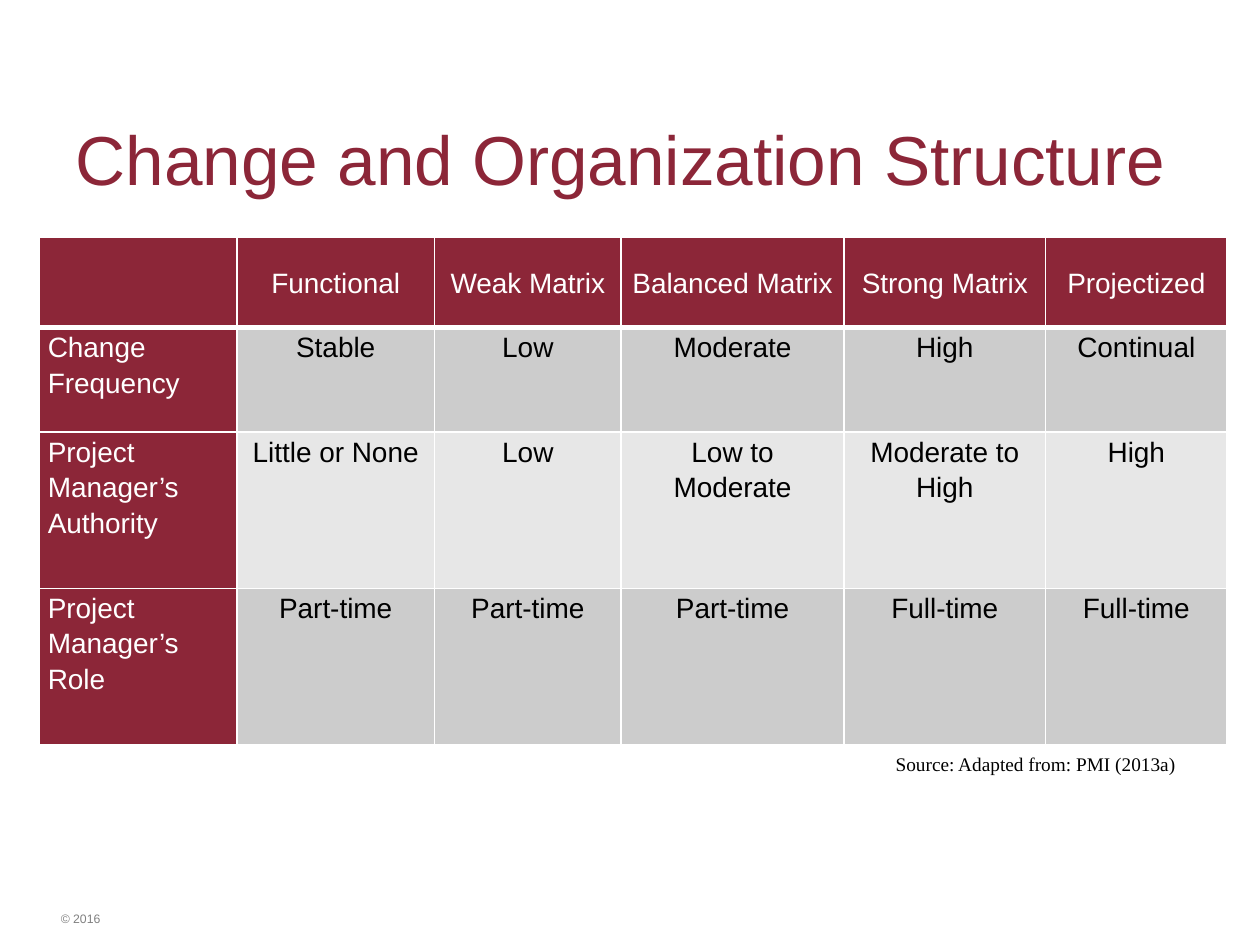
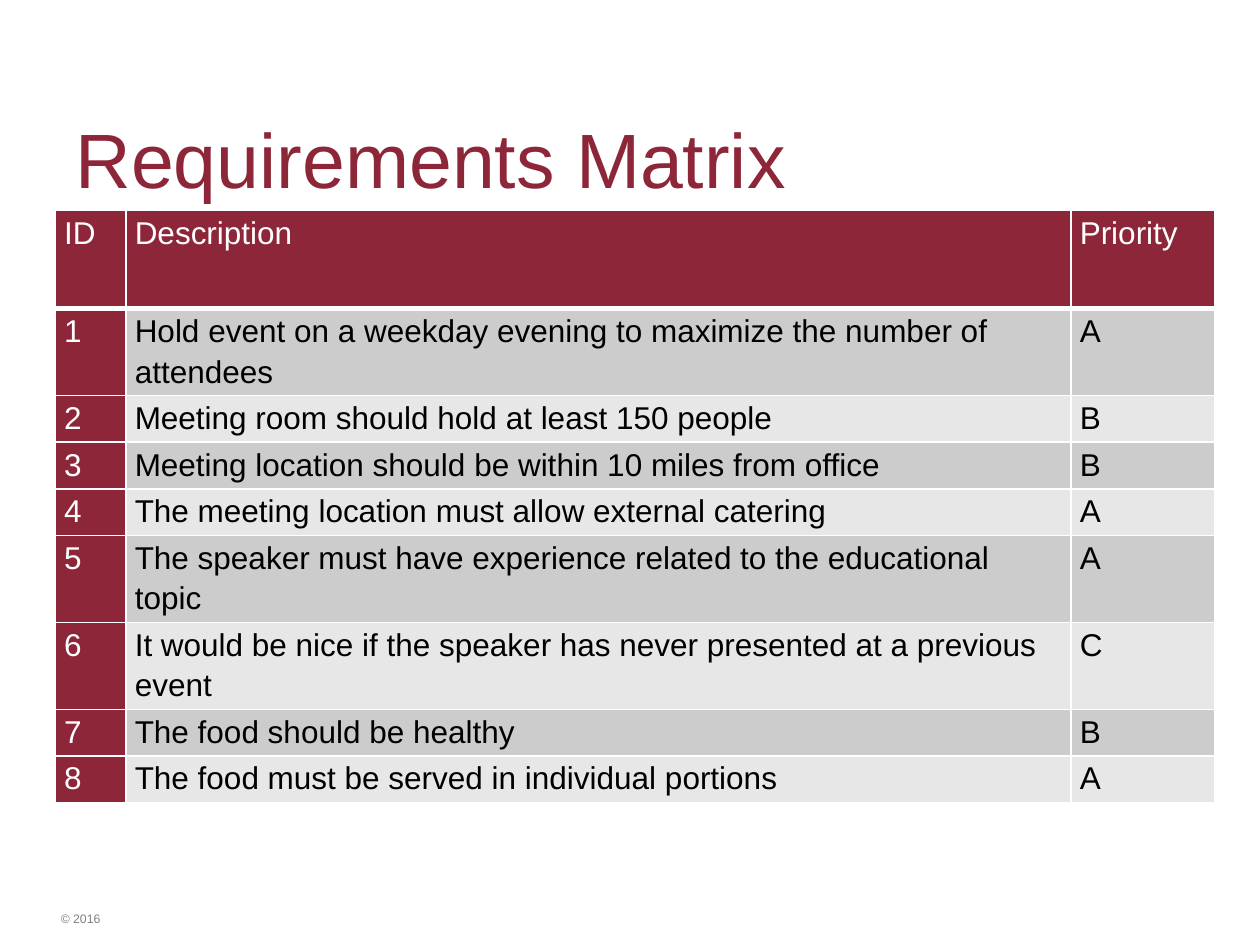
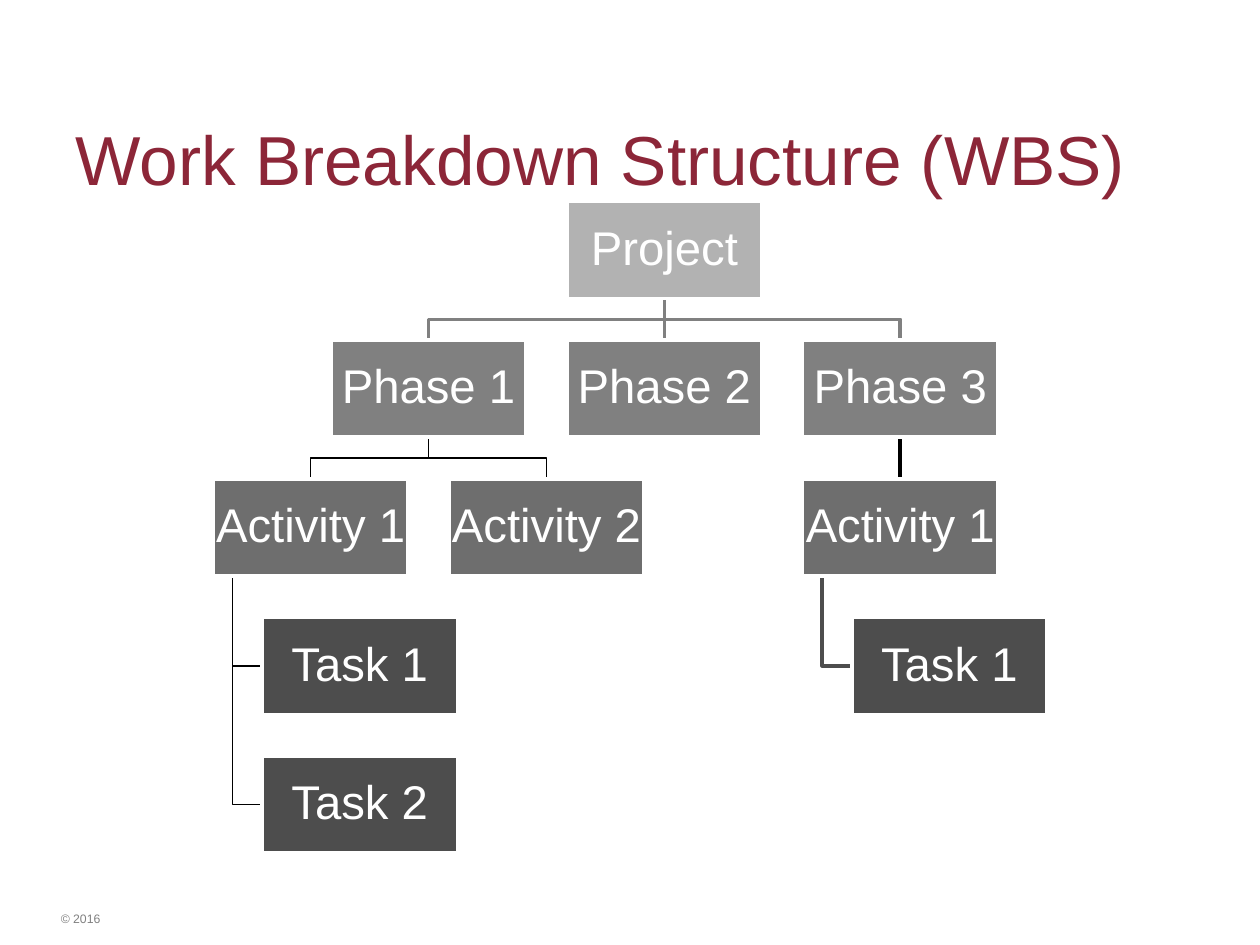
from dataclasses import dataclass

from lxml.etree import SubElement
from pptx import Presentation
from pptx.dml.color import RGBColor
from pptx.enum.shapes import MSO_CONNECTOR, MSO_SHAPE
from pptx.enum.text import MSO_ANCHOR, MSO_AUTO_SIZE, PP_ALIGN
from pptx.oxml.ns import qn
from pptx.util import Inches, Pt

WIDE, HIGH = Inches(10), Inches(7.5)
LEFT, MID = PP_ALIGN.LEFT, PP_ALIGN.CENTER


def ink(code):
    return RGBColor.from_string(code)


class Theme:
    sans, serif = "Arial", "Times New Roman"
    wine, white, black = ink("8C2638"), ink("FFFFFF"), ink("000000")
    gray, dark = ink("808080"), ink("4D4D4D")
    bands = ink("CCCCCC"), ink("E7E7E7")
    levels = ink("B2B2B2"), gray, ink("6E6E6E"), dark, dark
    title, snug = 44, 39.6
    grid, list, node, note, foot = 16, 18, 27, 11, 7
    thin, bold = 0.75, 2


# Lengths are percentages of the slide's width and height
def across(share):
    return round(WIDE * share / 100)


def down(share):
    return round(HIGH * share / 100)


def area(x, y, w, h):
    return across(x), down(y), across(w), down(h)


# Text
def write(frame, text, size, color, align=LEFT, face=Theme.sans, lines=None):
    para = frame.paragraphs[0]
    para.text = text
    para.alignment = align
    para.line_spacing = lines
    font = para.font
    font.name, font.size, font.color.rgb = face, Pt(size), color
    return para


def label(slide, place, text, size, color, **style):
    frame = slide.shapes.add_textbox(*place).text_frame
    frame.word_wrap = True
    return frame, write(frame, text, size, color, **style)


def new_slide(deck, title, size):
    slide = deck.slides.add_slide(deck.slide_layouts[5])
    head = slide.shapes.title
    head.left, head.top, head.width, head.height = area(5, 10.27, 90, 12.93)
    frame = head.text_frame
    frame.auto_size = MSO_AUTO_SIZE.NONE
    frame.vertical_anchor = MSO_ANCHOR.MIDDLE
    write(frame, title, size, Theme.wine)
    label(slide, area(2.6, 95.73, 7.6, 2.93), "© 2016",
          Theme.foot, Theme.gray, align=MID)
    return slide


# Tables
def edge(cell, head):
    props = cell._tc.get_or_add_tcPr()
    for side in "LRTB":
        width = 3 if head and side == "B" else 1
        line = SubElement(props, qn(f"a:ln{side}"), w=str(Pt(width)))
        fill = SubElement(line, qn("a:solidFill"))
        SubElement(fill, qn("a:srgbClr"), val=str(Theme.white))


def grid(slide, x, y, cols, rows, data, size, align=LEFT, lead=1.15):
    place = area(x, y, sum(cols), sum(rows))
    table = slide.shapes.add_table(len(rows), len(cols), *place).table
    table.first_row = table.horz_banding = False
    for col, share in zip(table.columns, cols):
        col.width = across(share)
    for row, share in zip(table.rows, rows):
        row.height = down(share)
    for r, line in enumerate(data):
        for c, text in enumerate(line):
            cell = table.cell(r, c)
            edge(cell, r == 0)
            wine = r == 0 or c == 0
            cell.fill.solid()
            cell.fill.fore_color.rgb = (
                Theme.wine if wine else Theme.bands[(r - 1) % 2])
            cell.margin_left = cell.margin_right = Inches(0.07)
            cell.margin_top = cell.margin_bottom = 0
            if text:
                write(cell.text_frame, text, size,
                      Theme.white if wine else Theme.black,
                      LEFT if c == 0 else align,
                      lines=lead if r == 0 else 1.15)


# Tree of boxes
@dataclass
class Node:
    text: str
    col: int
    row: int
    boss: "Node" = None
    color: RGBColor = Theme.black
    width: float = Theme.thin

    size = across(15.5), down(10.27)

    @property
    def hangs(self):
        return self.row > 2

    @property
    def left(self):
        return across(16.9 + 9.36 * self.col + 3.9 * self.hangs)

    @property
    def top(self):
        return down(21.33 + 14.67 * self.row)

    @property
    def center(self):
        return self.left + self.size[0] // 2

    @property
    def base(self):
        return self.top + self.size[1]


def route(node):
    boss = node.boss
    if node.hangs:
        trunk, half = boss.left + across(1.55), node.top + node.size[1] // 2
        return [(trunk, boss.base), (trunk, half), (node.left, half)]
    start, end = (boss.center, boss.base), (node.center, node.top)
    if node.col == boss.col:
        return [start, end]
    half = (boss.base + node.top) // 2
    return [start, (start[0], half), (end[0], half), end]


def link(slide, node):
    start, *rest = route(node)
    if len(rest) == 1:
        line = slide.shapes.add_connector(
            MSO_CONNECTOR.STRAIGHT, *start, *rest[0])
    else:
        pen = slide.shapes.build_freeform(*start)
        pen.add_line_segments(rest, close=False)
        line = pen.convert_to_shape()
        line.fill.background()
    line.line.color.rgb, line.line.width = node.color, Pt(node.width)
    SubElement(line._element.spPr, qn("a:effectLst"))


def box(slide, node):
    shape = slide.shapes.add_shape(
        MSO_SHAPE.RECTANGLE, node.left, node.top, *node.size)
    shape.shadow.inherit = False
    shape.fill.solid()
    shape.fill.fore_color.rgb = Theme.levels[node.row]
    shape.line.color.rgb, shape.line.width = Theme.white, Pt(Theme.bold)
    frame = shape.text_frame
    frame.word_wrap = False
    frame.vertical_anchor = MSO_ANCHOR.MIDDLE
    frame.margin_left = frame.margin_right = Inches(0.02)
    frame.margin_top = frame.margin_bottom = Inches(0.02)
    write(frame, node.text, Theme.node, Theme.white, MID, lines=0.9)


# Slides
def change(deck):
    slide = new_slide(deck, "Change and Organization Structure", Theme.snug)
    data = [
        ["", "Functional", "Weak Matrix", "Balanced Matrix",
         "Strong Matrix", "Projectized"],
        ["Change Frequency", "Stable", "Low", "Moderate", "High",
         "Continual"],
        ["Project Manager’s Authority", "Little or None", "Low",
         "Low to Moderate", "Moderate to High", "High"],
        ["Project Manager’s Role"] + ["Part-time"] * 3 + ["Full-time"] * 2,
    ]
    grid(slide, 3.1, 25.07, [15.7, 15.7, 14.8, 17.7, 16, 14.4],
         [9.6, 11.07, 16.53, 16.53], data, Theme.grid, MID, lead=2)
    frame, para = label(slide, area(65.1, 78.93, 29.6, 3.87),
                        "Source: Adapted from: PMI (2013a)",
                        Theme.note, Theme.black, face=Theme.serif)
    frame.vertical_anchor = MSO_ANCHOR.MIDDLE
    para._p.get_or_add_pPr().set("indent", str(Inches(0.5)))


def needs(deck):
    slide = new_slide(deck, "Requirements Matrix", Theme.title)
    items = [
        ("Hold event on a weekday evening to maximize the number of "
         "attendees", "A"),
        ("Meeting room should hold at least 150 people", "B"),
        ("Meeting location should be within 10 miles from office", "B"),
        ("The meeting location must allow external catering", "A"),
        ("The speaker must have experience related to the educational "
         "topic", "A"),
        ("It would be nice if the speaker has never presented at a "
         "previous event", "C"),
        ("The food should be healthy", "B"),
        ("The food must be served in individual portions", "A"),
    ]
    data = [("ID", "Description", "Priority")]
    data += [(str(n), *item) for n, item in enumerate(items, 1)]
    grid(slide, 4.4, 22.27, [5.6, 75, 11.4],
         [10.4] + [4.93] * len(items), data, Theme.list)


def work(deck):
    slide = new_slide(deck, "Work Breakdown Structure (WBS)", Theme.snug)
    root = Node("Project", 3, 0)
    phases = [Node(f"Phase {n}", 2 * n - 1, 1, root, Theme.gray, Theme.bold)
              for n in (1, 2, 3)]
    first, last = phases[0], phases[-1]
    acts = [Node("Activity 1", 0, 2, first),
            Node("Activity 2", 2, 2, first),
            Node("Activity 1", 5, 2, last, width=Theme.bold)]
    tasks = [Node("Task 1", 0, 3, acts[0]),
             Node("Task 2", 0, 4, acts[0]),
             Node("Task 1", 5, 3, acts[2], Theme.dark, Theme.bold)]
    below = phases + acts + tasks
    for node in below:
        link(slide, node)
    for node in [root] + below:
        box(slide, node)


def main():
    deck = Presentation()
    deck.slide_width, deck.slide_height = WIDE, HIGH
    change(deck)
    needs(deck)
    work(deck)
    deck.save("out.pptx")


if __name__ == "__main__":
    main()
